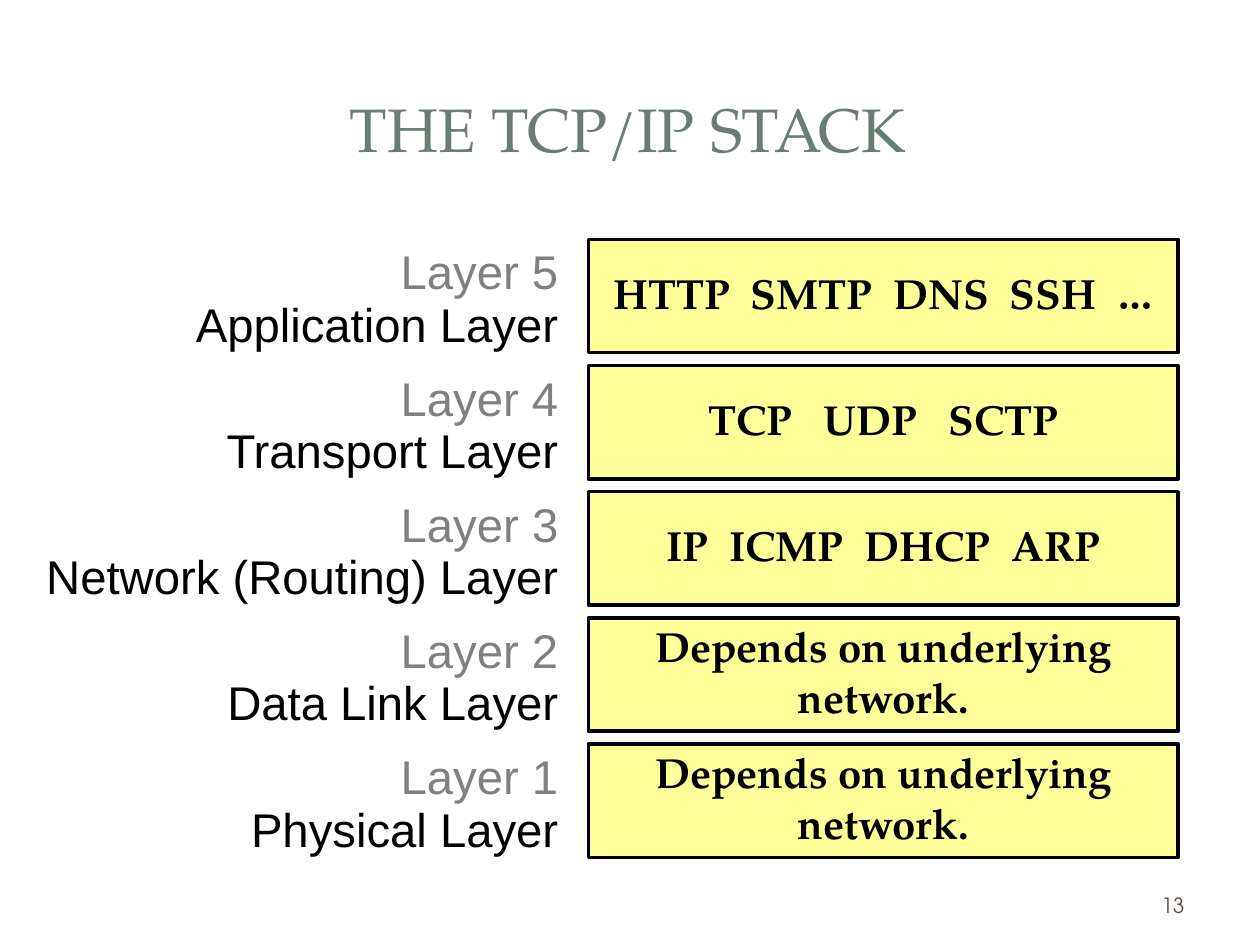
from pptx import Presentation
from pptx.dml.color import RGBColor
from pptx.enum.shapes import MSO_SHAPE
from pptx.enum.text import MSO_ANCHOR, PP_ALIGN
from pptx.util import Pt

COLORS = {"title": "6B7D72", "number": "564B3C", "layer": "808080",
          "text": "000000", "box": "FFFF99"}
SERIF, SANS, NUMBER_FONT = "TeX Gyre Pagella", "Arial", "TeX Gyre Adventor"

LAYERS = [
    ("Application Layer", "HTTP  SMTP  DNS  SSH  …", 60),
    ("Transport Layer", "TCP   UDP   SCTP", 60),
    ("Network (Routing) Layer", "IP  ICMP  DHCP  ARP", 0),
    ("Data Link Layer", "Depends on underlying network.", 60),
    ("Physical Layer", "Depends on underlying network.", 60),
]
TOP, PITCH = 136.8, 72.1
LABEL_RIGHT, BOX_LEFT, BOX_WIDTH, BOX_HEIGHT = 327.6, 336.2, 337, 64.8


class StackSlide:
    def __init__(self, slide):
        self.slide = slide

    def frame(self, sp, margins, anchor, align):
        tf = sp.text_frame
        tf.word_wrap = True
        tf.vertical_anchor = anchor
        tf.margin_left, tf.margin_top, tf.margin_right, tf.margin_bottom = map(Pt, margins)
        p = tf.paragraphs[0]
        p.alignment = align
        return p

    def run(self, p, text, size, font, color, bold=False):
        r = p.add_run()
        r.text = text
        r.font.size = Pt(size)
        r.font.name = font
        r.font.bold = bold
        r.font.color.rgb = RGBColor.from_string(COLORS[color])

    def title(self, text, left, top, width, height):
        sp = self.slide.shapes.title
        sp.left, sp.top, sp.width, sp.height = map(Pt, (left, top, width, height))
        p = self.frame(sp, (7.2, 3.6, 7.2, 3.6), MSO_ANCHOR.MIDDLE, PP_ALIGN.CENTER)
        self.run(p, text, 35, SERIF, "title")

    def label(self, number, name, left, top):
        sp = self.slide.shapes.add_textbox(Pt(left), Pt(top), Pt(LABEL_RIGHT - left), Pt(70))
        p = self.frame(sp, (8.6, 4.3, 8.6, 4.3), MSO_ANCHOR.TOP, PP_ALIGN.RIGHT)
        p.line_spacing = Pt(30)
        self.run(p, f"Layer {number}", 27, SANS, "layer")
        p.add_line_break()
        self.run(p, name, 27, SANS, "text")

    def box(self, text, top):
        sp = self.slide.shapes.add_shape(MSO_SHAPE.RECTANGLE, Pt(BOX_LEFT), Pt(top),
                                         Pt(BOX_WIDTH), Pt(BOX_HEIGHT))
        sp.shadow.inherit = False
        sp.fill.solid()
        sp.fill.fore_color.rgb = RGBColor.from_string(COLORS["box"])
        sp.line.color.rgb = RGBColor.from_string(COLORS["text"])
        sp.line.width = Pt(2)
        p = self.frame(sp, (7.2, 0, 7.2, 4), MSO_ANCHOR.MIDDLE, PP_ALIGN.CENTER)
        self.run(p, text, 24, SERIF, "text", bold=True)

    def page_number(self, text, left, top, width, height):
        sp = self.slide.shapes.add_textbox(*map(Pt, (left, top, width, height)))
        p = self.frame(sp, (7.2, 3.6, 7.2, 3.6), MSO_ANCHOR.MIDDLE, PP_ALIGN.RIGHT)
        self.run(p, text, 12, NUMBER_FONT, "number")


def main():
    prs = Presentation()
    prs.slide_width, prs.slide_height = Pt(720), Pt(540)
    s = StackSlide(prs.slides.add_slide(prs.slide_layouts[5]))
    s.title("THE TCP/IP STACK", 33.8, 32.4, 650, 82)
    for i, (name, protocols, left) in enumerate(LAYERS):
        top = TOP + i * PITCH
        s.label(len(LAYERS) - i, name, left, top)
        s.box(protocols, top)
    s.page_number("13", 516, 502.6, 168, 28.8)
    prs.save("out.pptx")


if __name__ == "__main__":
    main()
